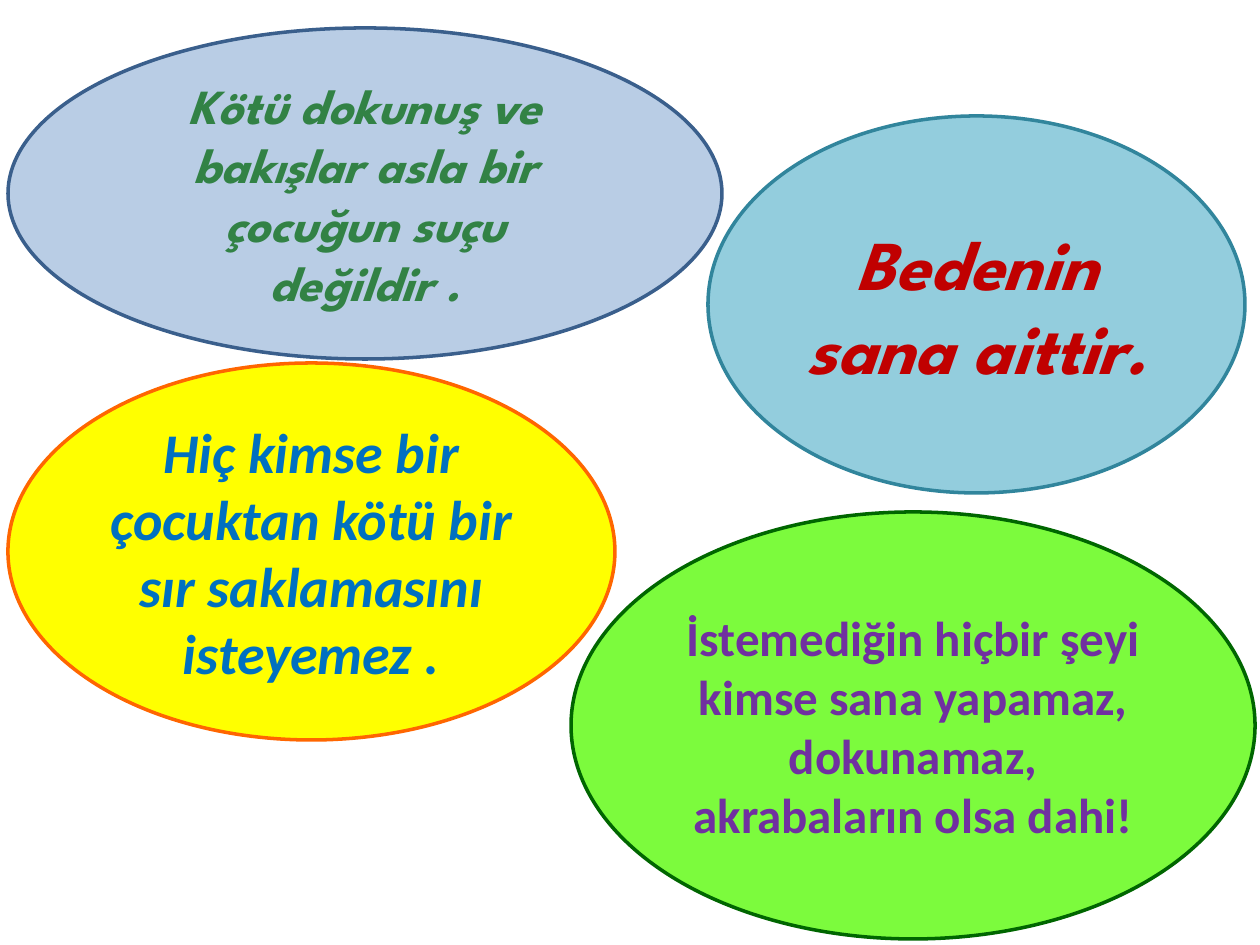
from pptx import Presentation
from pptx.dml.color import RGBColor
from pptx.enum.shapes import MSO_SHAPE
from pptx.enum.text import MSO_ANCHOR, PP_ALIGN
from pptx.util import Pt

ELLIPSE = MSO_SHAPE.OVAL
MIDDLE = MSO_ANCHOR.MIDDLE
CENTER = PP_ALIGN.CENTER
PX = 914400 / 126


def px(length):
    return round(length * PX)


def color(value):
    return RGBColor.from_string(value)


prs = Presentation()
prs.slide_width = px(1260)
prs.slide_height = px(945)
slide = prs.slides.add_slide(prs.slide_layouts[6])

messages = [
    ("Kötü dokunuş ve bakışlar asla bir çocuğun suçu değildir .",
     (8, 28, 714, 331), "B9CDE5", "3A5F8C", "League Spartan", 28, "328245", True),
    ("Bedenin sana aittir.",
     (708, 116, 537, 377), "93CDDD", "31859C", "League Spartan", 40, "C00000", True),
    ("Hiç kimse bir çocuktan kötü bir sır saklamasını isteyemez .",
     (8, 363, 607, 377), "FFFF00", "FF6600", "Calibri", 32, "0070C0", True),
    ("İstemediğin hiçbir şeyi kimse sana yapamaz, dokunamaz, akrabaların olsa dahi!",
     (571, 512, 684, 427), "7CFB3D", "006600", "Calibri", 28, "7030A0", False),
]

for message, box, fill, outline, typeface, size, ink, italic in messages:
    bubble = slide.shapes.add_shape(ELLIPSE, *map(px, box))
    bubble.shadow.inherit = False
    bubble.fill.solid()
    bubble.fill.fore_color.rgb = color(fill)
    bubble.line.color.rgb = color(outline)
    bubble.line.width = Pt(2)

    frame = bubble.text_frame
    frame.word_wrap = True
    frame.vertical_anchor = MIDDLE
    frame.text = message
    paragraph = frame.paragraphs[0]
    paragraph.alignment = CENTER
    font = paragraph.runs[0].font
    font.name = typeface
    font.size = Pt(size)
    font.bold = True
    font.italic = italic
    font.color.rgb = color(ink)

prs.save("out.pptx")
